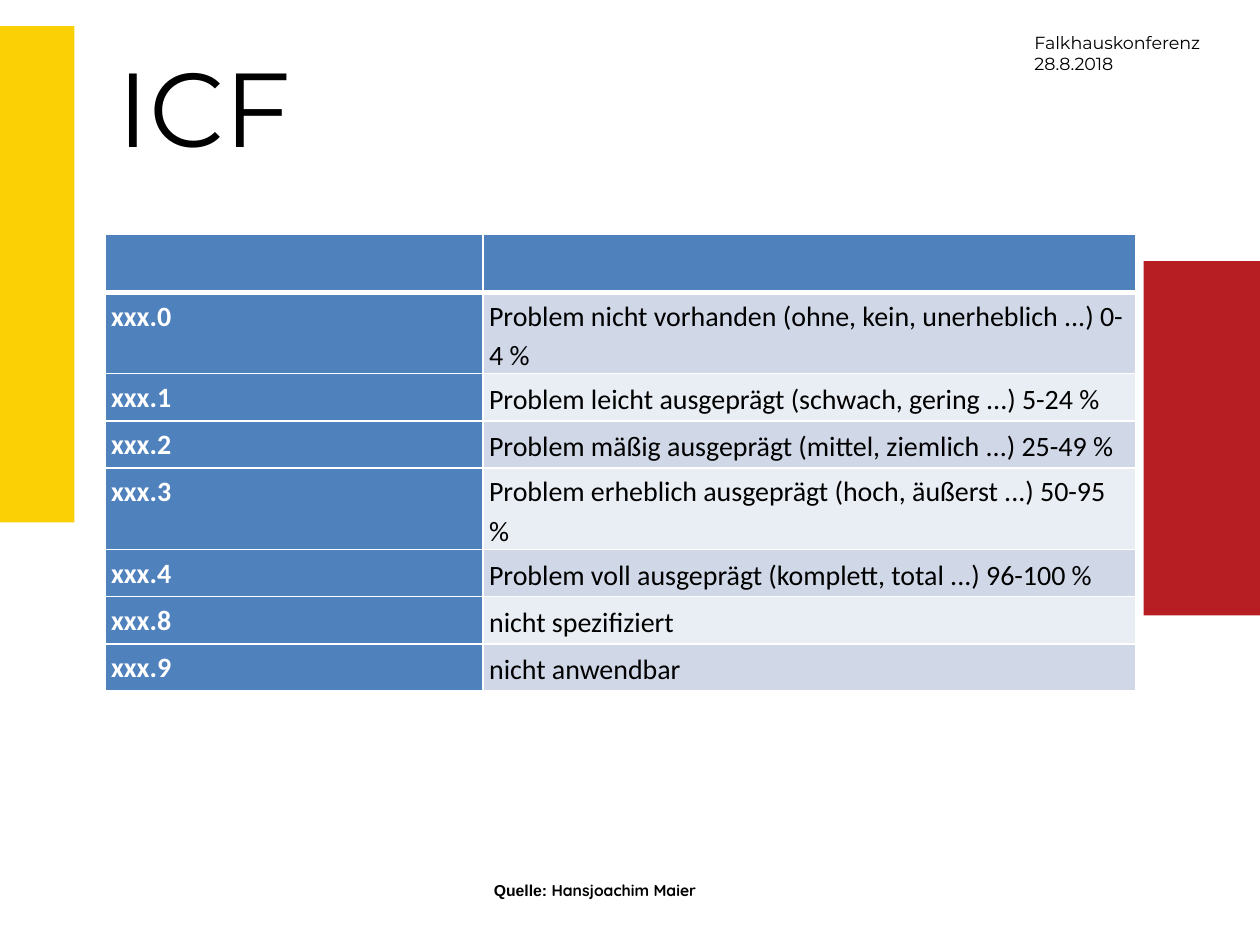
import pptx
import pptx.util
import pptx.dml.color
import pptx.enum.shapes
import pptx.enum.text
import pptx.oxml
import lxml.etree

Pt = pptx.util.Pt
RGBColor = pptx.dml.color.RGBColor
MSO_ANCHOR = pptx.enum.text.MSO_ANCHOR

BLACK = RGBColor(0x00, 0x00, 0x00)
WHITE = RGBColor(0xFF, 0xFF, 0xFF)
YELLOW = RGBColor(0xFB, 0xD1, 0x05)
RED = RGBColor(0xB6, 0x1E, 0x24)
BLUE = RGBColor(0x4F, 0x81, 0xBD)
BAND_DARK = RGBColor(0xD0, 0xD8, 0xE8)
BAND_LIGHT = RGBColor(0xE9, 0xED, 0xF4)

RATINGS = [
    ("xxx.0", "Problem nicht vorhanden (ohne, kein, unerheblich ...) 0-4 %"),
    ("xxx.1", "Problem leicht ausgeprägt (schwach, gering ...) 5-24 %"),
    ("xxx.2", "Problem mäßig ausgeprägt (mittel, ziemlich ...) 25-49 %"),
    ("xxx.3", "Problem erheblich ausgeprägt (hoch, äußerst ...) 50-95 %"),
    ("xxx.4", "Problem voll ausgeprägt (komplett, total ...) 96-100 %"),
    ("xxx.8", "nicht spezifiziert"),
    ("xxx.9", "nicht anwendbar"),
]


def add_text(p, text, *, size, font, color=BLACK, bold=False, spacing=None):
    r = p.add_run()
    r.text = text
    r.font.size = Pt(size)
    r.font.name = font
    r.font.color.rgb = color
    r.font.bold = bold
    if spacing:
        p.line_spacing = spacing


def add_block(s, x, y, w, h, color):
    sp = s.shapes.add_shape(
        pptx.enum.shapes.MSO_SHAPE.RECTANGLE, Pt(x), Pt(y), Pt(w), Pt(h))
    sp.shadow.inherit = False
    sp.fill.solid()
    sp.fill.fore_color.rgb = color
    sp.line.fill.background()


def add_box(s, x, y, w, h, lines, wrap=True, **fmt):
    tf = s.shapes.add_textbox(Pt(x), Pt(y), Pt(w), Pt(h)).text_frame
    tf.word_wrap = wrap
    tf.auto_size = pptx.enum.text.MSO_AUTO_SIZE.SHAPE_TO_FIT_TEXT
    for i, line in enumerate(lines):
        p = tf.add_paragraph() if i else tf.paragraphs[0]
        add_text(p, line, **fmt)


def set_borders(cell, top=1, bottom=1):
    tc_pr = cell._tc.get_or_add_tcPr()
    for side, width in (("L", 1), ("R", 1), ("T", top), ("B", bottom)):
        ln = lxml.etree.SubElement(
            tc_pr, pptx.oxml.ns.qn(f"a:ln{side}"), w=str(Pt(width)))
        fill = lxml.etree.SubElement(ln, pptx.oxml.ns.qn("a:solidFill"))
        lxml.etree.SubElement(
            fill, pptx.oxml.ns.qn("a:srgbClr"), val=str(WHITE))


def add_grid(s, x, y, widths, heights):
    table = s.shapes.add_table(
        len(heights), len(widths), Pt(x), Pt(y),
        Pt(sum(widths)), Pt(sum(heights))).table
    table.first_row = False
    table.horz_banding = False
    for col, width in zip(table.columns, widths):
        col.width = Pt(width)
    for row, height in zip(table.rows, heights):
        row.height = Pt(height)
    return table


def fill_cell(cell, color):
    cell.fill.solid()
    cell.fill.fore_color.rgb = color


def add_rating_table(s, x, y, w):
    code_w = 216
    table = add_grid(s, x, y, [code_w, w - code_w], [33, 44] + [27] * 6)
    for cell in table.rows[0].cells:
        set_borders(cell, bottom=3)
        fill_cell(cell, BLUE)
    for i, rating in enumerate(RATINGS, 1):
        code, meaning = table.rows[i].cells
        for cell, text in zip((code, meaning), rating):
            is_code = cell is code
            set_borders(cell, top=3 if i == 1 else 1)
            fill_cell(cell, BLUE if is_code else
                      BAND_DARK if i % 2 else BAND_LIGHT)
            cell.margin_left = cell.margin_right = Pt(3.5)
            cell.margin_top = cell.margin_bottom = Pt(1.2)
            cell.vertical_anchor = MSO_ANCHOR.TOP if is_code else MSO_ANCHOR.MIDDLE
            add_text(cell.text_frame.paragraphs[0], text, size=16,
                     font="Calibri", color=WHITE if is_code else BLACK,
                     bold=is_code, spacing=1.15)


def add_source_footer(s, x, y, h):
    table = add_grid(s, x, y, [185, 81.5, 289.5], [h])
    for cell in table.rows[0].cells:
        set_borders(cell, bottom=3)
        cell.fill.background()
    source = table.cell(0, 2)
    source.margin_top = Pt(24)
    p = source.text_frame.paragraphs[0]
    add_text(p, "Quelle: ", size=9, font="Arial", bold=True)
    add_text(p, "Hansjoachim Maier", size=9, font="Quicksand", bold=True)


def main():
    prs = pptx.Presentation()
    prs.slide_width, prs.slide_height = Pt(720), Pt(540)
    s = prs.slides.add_slide(prs.slide_layouts[6])
    add_block(s, -241, 15, 283.5, 283.5, YELLOW)
    add_box(s, 584, 15, 118, 32, ["Falkhauskonferenz", "28.8.2018"],
            wrap=False, size=10, font="Montserrat")
    add_source_footer(s, 8.5, 479.5, 108)
    add_block(s, 653.5, 149.25, 202.5, 202.5, RED)
    add_box(s, 60, 21, 572, 80, ["ICF"], size=60, font="Montserrat")
    add_rating_table(s, 60, 134, 589)
    prs.save("out.pptx")


if __name__ == "__main__":
    main()
